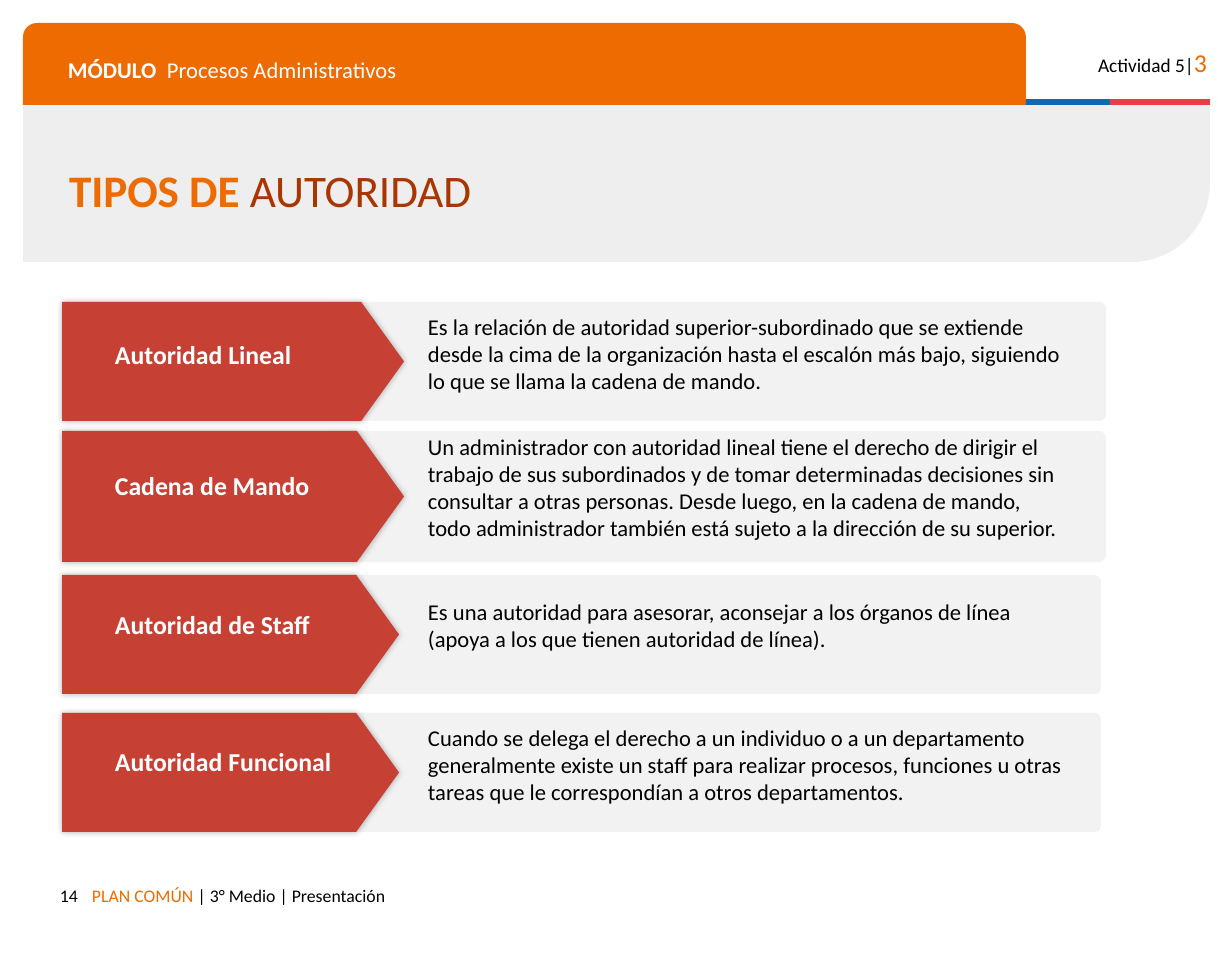
from lxml import etree
from pptx import Presentation
from pptx import util as u
from pptx.dml.color import RGBColor
from pptx.enum import shapes, text
from pptx.oxml.ns import qn

PX = 914400 / 116
FONT = "Calibri"
BLACK = RGBColor(0x00, 0x00, 0x00)
WHITE = RGBColor(0xFF, 0xFF, 0xFF)
ORANGE = RGBColor(0xED, 0x6B, 0x00)
RUST = RGBColor(0xA9, 0x35, 0x01)
BLUE = RGBColor(0x0F, 0x69, 0xB4)
RED = RGBColor(0xEB, 0x3C, 0x46)
BRICK = RGBColor(0xC6, 0x40, 0x33)
TITLE_GRAY = RGBColor(0xEE, 0xEE, 0xEE)
ROW_GRAY = RGBColor(0xF2, 0xF2, 0xF2)

# Runs: text, colour, bold, size
TITLE = [("TIPOS DE ", ORANGE, True, 28), ("AUTORIDAD", RUST, False, 28)]
MODULE = [("MÓDULO", WHITE, True, 14), ("\tProcesos Administrativos", WHITE, False, 14)]
ACTIVITY = [("Actividad 5|", BLACK, False, 12), ("3", ORANGE, False, 16)]
PAGE = [("14", BLACK, False, 11)]
FOOTER = [("PLAN COMÚN ", ORANGE, False, 11), ("| 3° Medio | Presentación", BLACK, False, 11)]

# Label, description, top, height, arrow tip, label top, description top and height
AUTHORITIES = [
    ("Autoridad Lineal",
     "Es la relación de autoridad superior-subordinado que se extiende desde la cima de la "
     "organización hasta el escalón más bajo, siguiendo lo que se llama la cadena de mando.",
     302, 119, 404, 333, 307, 94),
    ("Cadena de Mando",
     "Un administrador con autoridad lineal tiene el derecho de dirigir el trabajo de sus "
     "subordinados y de tomar determinadas decisiones sin consultar a otras personas. Desde "
     "luego, en la cadena de mando, todo administrador también está sujeto a la dirección de "
     "su superior.",
     431, 131, 404, 464, 427, 123),
    ("Autoridad de Staff",
     "Es una autoridad para asesorar, aconsejar a los órganos de línea (apoya a los que tienen "
     "autoridad de línea).",
     575, 119, 399, 603, 592, 65),
    ("Autoridad Funcional",
     "Cuando se delega el derecho a un individuo o a un departamento generalmente existe un "
     "staff para realizar procesos, funciones u otras tareas que le correspondían a otros "
     "departamentos.",
     713, 119, 399, 740, 718, 94),
]
ARROW_LEFT = 62
PANEL_WIDTH = 784
TIP_TO_PANEL = 82


def px(length):
    return u.Emu(round(length * PX))


def add_block(slide, kind, box, fill, adjustments=()):
    block = slide.shapes.add_shape(kind, *map(px, box))
    block.shadow.inherit = False
    block.fill.solid()
    block.fill.fore_color.rgb = fill
    block.line.fill.background()
    for index, value in enumerate(adjustments):
        block.adjustments[index] = value
    return block


def add_soft_shadow(block):
    effects = block._element.spPr.find(qn("a:effectLst"))
    shadow = etree.SubElement(effects, qn("a:outerShdw"), blurRad="50800", dist="0")
    colour = etree.SubElement(shadow, qn("a:srgbClr"), val="000000")
    etree.SubElement(colour, qn("a:alpha"), val="28000")


def write(frame, runs, inset, align=text.PP_ALIGN.LEFT, tab=None):
    """Fill a text frame with one paragraph, its fonts shared where the runs agree."""
    frame.word_wrap = True
    frame.auto_size = text.MSO_AUTO_SIZE.NONE
    frame.margin_left = frame.margin_right = px(inset)
    frame.margin_top = frame.margin_bottom = px(inset)
    paragraph = frame.paragraphs[0]
    paragraph.alignment = align
    if tab:
        tabs = etree.SubElement(paragraph._p.get_or_add_pPr(), qn("a:tabLst"))
        etree.SubElement(tabs, qn("a:tab"), pos=str(px(tab)), algn="l")
    added = [paragraph.add_run() for _ in runs]
    _, colours, bolds, sizes = map(set, zip(*runs))
    paragraph.font.name = FONT
    for run, (words, colour, bold, size) in zip(added, runs):
        run.text = words
        (paragraph if len(colours) == 1 else run).font.color.rgb = colour
        (paragraph if len(bolds) == 1 else run).font.bold = bold
        (paragraph if len(sizes) == 1 else run).font.size = u.Pt(size)
    return paragraph


def add_text(slide, box, runs, inset=12, **layout):
    write(slide.shapes.add_textbox(*map(px, box)).text_frame, runs, inset, **layout)


def add_header(slide):
    kinds = shapes.MSO_SHAPE
    # Turned a quarter so that the round corner falls at the bottom right
    band = add_block(slide, kinds.ROUND_1_RECTANGLE, (538, -410, 157, 1187), TITLE_GRAY, [0.5])
    band.rotation = 90
    add_block(slide, kinds.ROUND_2_SAME_RECTANGLE, (23, 23, 1003, 82), ORANGE, [0.17, 0])
    add_block(slide, kinds.RECTANGLE, (1026, 99, 84, 6), BLUE)
    add_block(slide, kinds.RECTANGLE, (1110, 99, 100, 6), RED)
    add_text(slide, (1071, 35, 148, 50), ACTIVITY, align=text.PP_ALIGN.RIGHT)
    add_text(slide, (56, 44, 944, 48), MODULE, tab=99)


def add_title(slide):
    title = slide.shapes.title
    title.left, title.top, title.width, title.height = map(px, (57, 161, 768, 68))
    title.text_frame.vertical_anchor = text.MSO_ANCHOR.MIDDLE
    write(title.text_frame, TITLE, 12).line_spacing = 0.8


def add_authority(slide, label, description, top, height, tip, label_top, text_top, text_height):
    kinds = shapes.MSO_SHAPE
    panel = (tip - TIP_TO_PANEL, top, PANEL_WIDTH, height)
    add_block(slide, kinds.ROUNDED_RECTANGLE, panel, ROW_GRAY, [0.055])
    arrow = (ARROW_LEFT, top, tip - ARROW_LEFT, height)
    add_soft_shadow(add_block(slide, kinds.PENTAGON, arrow, BRICK, [0.36]))
    add_text(slide, (109, label_top, 246, 38), [(label, WHITE, True, 16)], inset=6)
    add_text(slide, (422, text_top, 652, text_height), [(description, BLACK, False, 14)], inset=6)


def main():
    deck = Presentation()
    deck.slide_width, deck.slide_height = px(1232), px(958)
    slide = deck.slides.add_slide(deck.slide_layouts.get_by_name("Title Only"))
    add_header(slide)
    add_title(slide)
    # The title stands in front of its band
    slide.shapes._spTree.append(slide.shapes.title._element)
    for authority in AUTHORITIES:
        add_authority(slide, *authority)
    add_text(slide, (47, 873, 43, 41), PAGE, align=text.PP_ALIGN.RIGHT)
    add_text(slide, (80, 873, 828, 41), FOOTER)
    deck.save("out.pptx")


if __name__ == "__main__":
    main()
